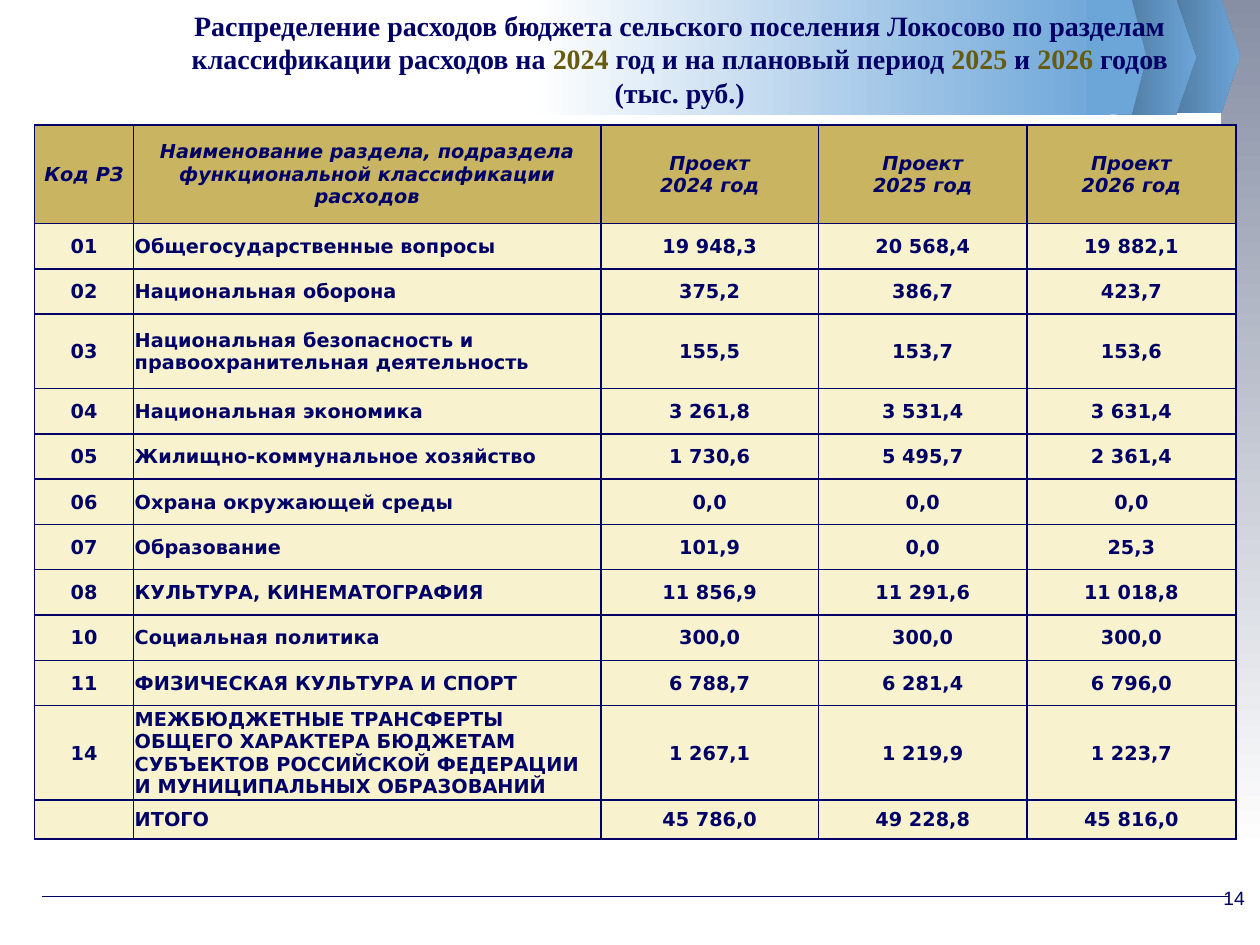
from lxml import etree
from pptx import Presentation
from pptx.dml.color import RGBColor
from pptx.enum.shapes import MSO_CONNECTOR, MSO_SHAPE
from pptx.enum.text import MSO_ANCHOR, MSO_AUTO_SIZE, PP_ALIGN
from pptx.oxml.ns import qn
from pptx.util import Pt

RECTANGLE, PENTAGON = MSO_SHAPE.RECTANGLE, MSO_SHAPE.PENTAGON
LEFT, CENTER = PP_ALIGN.LEFT, PP_ALIGN.CENTER
MIDDLE = MSO_ANCHOR.MIDDLE

NAVY = RGBColor(0x00, 0x00, 0x66)
OLIVE = RGBColor(0x66, 0x5B, 0x0F)
GOLD = RGBColor(0xC9, 0xB4, 0x61)
CREAM = RGBColor(0xF8, 0xF3, 0xCE)
WHITE = RGBColor(0xFF, 0xFF, 0xFF)
GREY = RGBColor(0x87, 0x8F, 0xA5)
STEEL = RGBColor(0x4D, 0x76, 0x9B)
SKY = RGBColor(0x6C, 0xA5, 0xD8)

# Content
TITLE = [
    ("Распределение расходов бюджета сельского поселения Локосово по разделам "
     "классификации расходов на ", NAVY),
    ("2024", OLIVE),
    (" год и на плановый период ", NAVY),
    ("2025", OLIVE),
    (" и ", NAVY),
    ("2026", OLIVE),
    (" годов (тыс. руб.)", NAVY),
]
HEADER = ("Код РЗ", "Наименование раздела, подраздела функциональной классификации расходов",
          "Проект\n2024 год", "Проект\n2025 год", "Проект\n2026 год")
EXPENSES = [
    ("01", "Общегосударственные вопросы", "19 948,3", "20 568,4", "19 882,1"),
    ("02", "Национальная оборона", "375,2", "386,7", "423,7"),
    ("03", "Национальная безопасность и правоохранительная деятельность",
     "155,5", "153,7", "153,6"),
    ("04", "Национальная экономика", "3 261,8", "3 531,4", "3 631,4"),
    ("05", "Жилищно-коммунальное хозяйство", "1 730,6", "5 495,7", "2 361,4"),
    ("06", "Охрана окружающей среды", "0,0", "0,0", "0,0"),
    ("07", "Образование", "101,9", "0,0", "25,3"),
    ("08", "КУЛЬТУРА, КИНЕМАТОГРАФИЯ", "11 856,9", "11 291,6", "11 018,8"),
    ("10", "Социальная политика", "300,0", "300,0", "300,0"),
    ("11", "ФИЗИЧЕСКАЯ КУЛЬТУРА И СПОРТ", "6 788,7", "6 281,4", "6 796,0"),
    ("14", "МЕЖБЮДЖЕТНЫЕ ТРАНСФЕРТЫ ОБЩЕГО ХАРАКТЕРА БЮДЖЕТАМ СУБЪЕКТОВ "
     "РОССИЙСКОЙ ФЕДЕРАЦИИ И МУНИЦИПАЛЬНЫХ ОБРАЗОВАНИЙ",
     "1 267,1", "1 219,9", "1 223,7"),
    ("", "ИТОГО", "45 786,0", "49 228,8", "45 816,0"),
]
PAGE_NUMBER = "14"

# Layout, in points
COLUMN_WIDTHS = (56.5, 267, 124.5, 119, 119.5)
HEADER_HEIGHT, ROW_HEIGHT = 56.5, 25.9
SPECIAL_HEIGHTS = {"03": 42.5, "14": 54, "": 22.3}
TABLE_LEFT, TABLE_TOP = 19.8, 71.3
BAND_HEIGHT = 65.5

# Decoration from back to front: preset, left, top, width, height, colours, angle
SIDE_STRIP = (RECTANGLE, 697.7, 0, 22.3, 487.4, (GREY, WHITE), 270)
HEADER_BAND = [
    (PENTAGON, 666, -0.7, 42.5, BAND_HEIGHT, (STEEL, SKY), 0),
    (PENTAGON, 638, 0, 45.4, BAND_HEIGHT, (STEEL, SKY), 0),
    (RECTANGLE, 303, 0, 331.2, BAND_HEIGHT, (WHITE, SKY), 0),
    (PENTAGON, 621.4, 0, 33.8, BAND_HEIGHT, (SKY,), 0),
]


def add_decoration(slide, preset, left, top, width, height, colors, angle):
    shape = slide.shapes.add_shape(preset, Pt(left), Pt(top), Pt(width), Pt(height))
    shape.shadow.inherit = False
    shape.line.fill.background()
    if preset == PENTAGON:
        shape.adjustments[0] = 0.25
    if len(colors) == 1:
        shape.fill.solid()
        shape.fill.fore_color.rgb = colors[0]
    else:
        shape.fill.gradient()
        shape.fill.gradient_angle = angle
        for stop, color in zip(shape.fill.gradient_stops, colors):
            stop.color.rgb = color


def add_run(paragraph, text, font_name, size, color=NAVY, bold=False, italic=False):
    run = paragraph.add_run()
    run.text = text
    font = run.font
    font.name, font.size, font.bold, font.italic = font_name, Pt(size), bold, italic
    font.color.rgb = color


def add_footer_line(slide):
    line = slide.shapes.add_connector(MSO_CONNECTOR.STRAIGHT, Pt(24), Pt(512.5),
                                      Pt(702), Pt(512.5))
    line.line.color.rgb = NAVY
    line.line.width = Pt(0.75)
    etree.SubElement(line._element.spPr, qn("a:effectLst"))


def add_borders(cell):
    properties = cell._tc.get_or_add_tcPr()
    for side in ("lnL", "lnR", "lnT", "lnB"):
        border = etree.SubElement(properties, qn(f"a:{side}"), w=str(Pt(1)))
        fill = etree.SubElement(border, qn("a:solidFill"))
        etree.SubElement(fill, qn("a:srgbClr"), val=str(NAVY))


def fill_cell(cell, text, is_header, alignment):
    cell.margin_left = cell.margin_right = cell.margin_top = Pt(0.7)
    cell.margin_bottom = 0
    cell.vertical_anchor = MIDDLE
    add_borders(cell)
    cell.fill.solid()
    cell.fill.fore_color.rgb = GOLD if is_header else CREAM
    frame = cell.text_frame
    for index, line in enumerate(text.split("\n")):
        paragraph = frame.add_paragraph() if index else frame.paragraphs[0]
        paragraph.alignment = alignment
        add_run(paragraph, line, "DejaVu Sans", 11, bold=True, italic=is_header)


def add_expense_table(slide):
    rows = [HEADER] + EXPENSES
    heights = [HEADER_HEIGHT] + [SPECIAL_HEIGHTS.get(row[0], ROW_HEIGHT) for row in EXPENSES]
    table = slide.shapes.add_table(len(rows), len(HEADER), Pt(TABLE_LEFT), Pt(TABLE_TOP),
                                   Pt(sum(COLUMN_WIDTHS)), Pt(sum(heights))).table
    for column, width in zip(table.columns, COLUMN_WIDTHS):
        column.width = Pt(width)
    for row_index, (row, height) in enumerate(zip(rows, heights)):
        table.rows[row_index].height = Pt(height)
        is_header = row_index == 0
        for column_index, text in enumerate(row):
            is_name = column_index == 1 and not is_header
            fill_cell(table.cell(row_index, column_index), text, is_header,
                      LEFT if is_name else CENTER)


def format_title(slide):
    title = slide.shapes.title
    title.left, title.top, title.width, title.height = Pt(93.6), Pt(9.4), Pt(589.7), Pt(48.2)
    slide.shapes._spTree.append(title._element)  # in front of the header band
    frame = title.text_frame
    frame.word_wrap = True
    frame.auto_size = MSO_AUTO_SIZE.NONE
    frame.vertical_anchor = MIDDLE
    paragraph = frame.paragraphs[0]
    paragraph.alignment = CENTER
    for text, color in TITLE:
        add_run(paragraph, text, "Times New Roman", 16, color, bold=True)


def add_page_number(slide):
    box = slide.shapes.add_textbox(Pt(692), Pt(502.6), Pt(28), Pt(20.9))
    box.text_frame.word_wrap = True
    add_run(box.text_frame.paragraphs[0], PAGE_NUMBER, "Arial", 11)


def main():
    presentation = Presentation()
    presentation.slide_width, presentation.slide_height = Pt(720), Pt(540)
    slide = presentation.slides.add_slide(presentation.slide_layouts[5])

    # Background decoration
    add_decoration(slide, *SIDE_STRIP)
    add_footer_line(slide)
    for part in HEADER_BAND:
        add_decoration(slide, *part)

    # Title, table and page number
    format_title(slide)
    add_expense_table(slide)
    add_page_number(slide)
    presentation.save("out.pptx")


if __name__ == "__main__":
    main()
